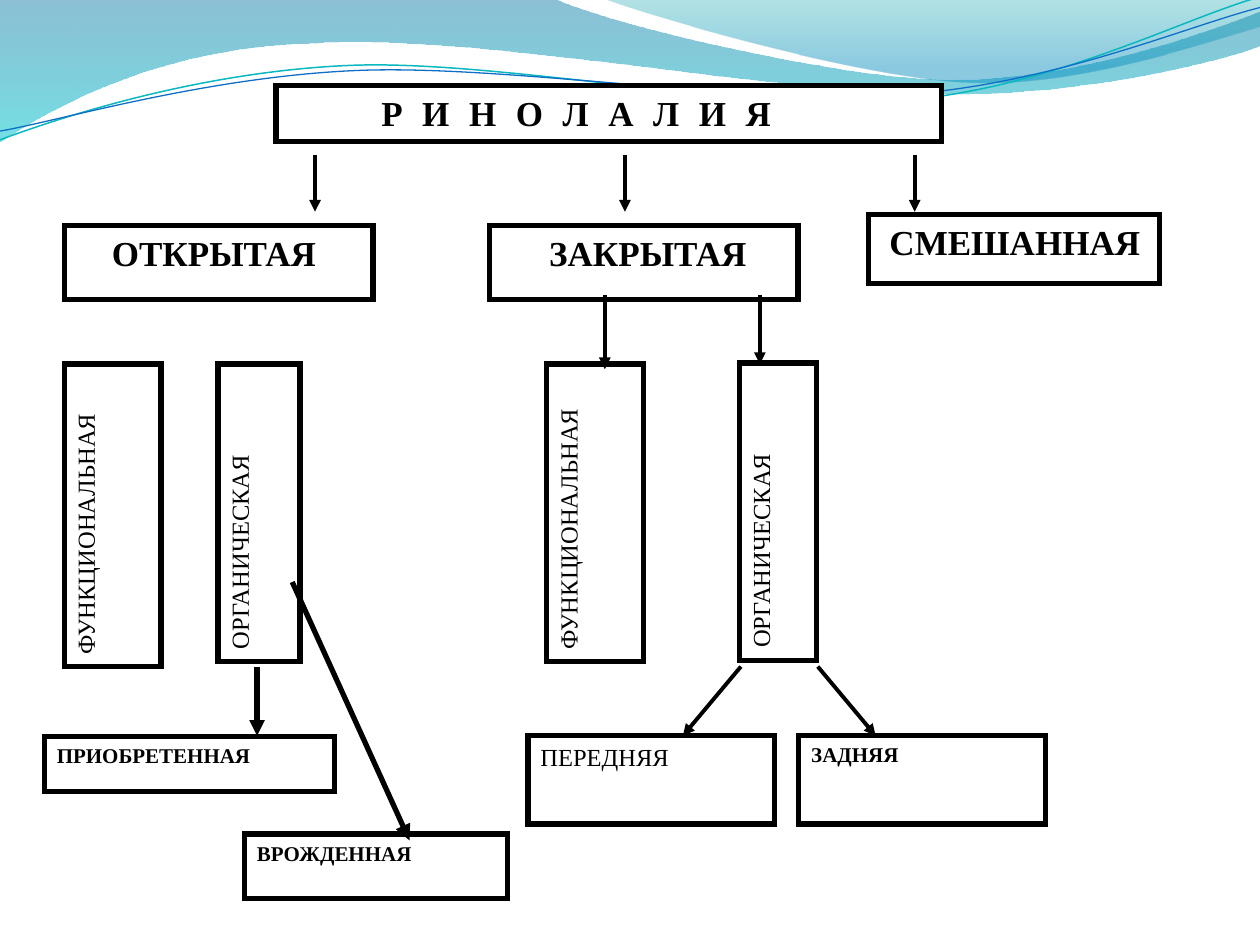
import math
from dataclasses import dataclass
from typing import Optional

import lxml.etree
import pptx
import pptx.dml.color
import pptx.enum.shapes
import pptx.enum.text
import pptx.oxml.ns
import pptx.util

Pt = pptx.util.Pt
qn = pptx.oxml.ns.qn

COLORS = {
    "black": "000000",
    "white": "FFFFFF",
    "deep_blue": "0074A1",
    "aqua": "00C6CF",
    "teal": "00A1A9",
    "sky": "008BBF",
    "teal_line": "0AB8BF",
    "blue_line": "0F6FC6",
}
FONT = "Times New Roman"
INSET = 7.2
TILT = 357.3


@dataclass
class Stop:
    position: float
    color: str
    opacity: int


@dataclass
class Wave:
    """Segments hold two numbers for a straight line, six for a cubic curve."""
    start: tuple
    segments: list
    stops: Optional[list] = None
    line_color: str = ""
    line_width: float = 0
    center: Optional[tuple] = None


@dataclass
class Box:
    text: str
    left: float
    top: float
    width: float
    height: float
    size: float
    bold: bool = True
    indent: float = 0
    vertical: bool = False
    spacing: float = 0


@dataclass
class Arrow:
    start: tuple
    end: tuple
    width: float = 2.25


FILLED_WAVES = [
    Wave((0, 0), [
        (316.8, -0.7),
        (342.7, 12.2, 478.1, 45.4, 545.8, 45.4),
        (614.2, 45.4, 689.8, 18.7, 720, 6.5),
        (720.7, 25.9),
        (707.8, 31.7, 626.4, 54.7, 537.1, 54),
        (447.8, 54, 275, 20.2, 185, 24.5),
        (92.9, 25.9, 33.1, 59.8, -0.7, 81.4),
        (0, 0),
    ], [Stop(0, "deep_blue", 45), Stop(1, "aqua", 55)]),
    Wave((344.9, -0.7), [
        (366.5, 7.9, 491, 44.6, 553.7, 46.8),
        (616.3, 49.7, 691.9, 23, 720, 15.1),
        (720, 0),
        (344.9, -0.7),
    ], [Stop(0, "teal", 30), Stop(0.8, "sky", 45)]),
]

WAVE_LINES = [
    Wave((0, 79.9), [
        (34.6, 67, 113.8, 41, 199.4, 37.4),
        (284.4, 33.8, 427, 64.1, 513.4, 57.6),
        (599.8, 51.1, 675.4, 10.8, 718.6, -1.4),
    ], line_color="teal_line", line_width=0.85, center=(359.3, 41.4)),
    Wave((0, 74.9), [
        (33.8, 69.1, 118.1, 43.9, 203.8, 40.3),
        (290.2, 36.7, 429.8, 60.5, 516.2, 54),
        (601.9, 48.2, 677.5, 15.1, 720, 4.3),
    ], line_color="blue_line", line_width=0.75, center=(359.6, 42.5)),
]

BOXES = [
    Box("Р И Н О Л А Л И Я", 157.7, 49, 380.2, 31.7, 20, indent=53, spacing=3.1),
    Box("ОТКРЫТАЯ", 36.7, 128.9, 176.4, 42.5, 20, indent=20),
    Box("ЗАКРЫТАЯ", 279.6, 128.9, 176.4, 42.5, 20, indent=27),
    Box("СМЕШАННАЯ", 496.1, 122.4, 166.3, 39.6, 20, indent=5),
    Box("ФУНКЦИОНАЛЬНАЯ", 36.7, 208.1, 55.4, 172.8, 14, bold=False, vertical=True),
    Box("ОРГАНИЧЕСКАЯ", 124.6, 208.1, 46.8, 169.9, 14, bold=False, vertical=True),
    Box("ФУНКЦИОНАЛЬНАЯ", 312.5, 208.1, 55.4, 169.9, 14, bold=False, vertical=True),
    Box("ОРГАНИЧЕСКАЯ", 422.6, 207.4, 43.9, 169.9, 14, bold=False, vertical=True),
    Box("ПЕРЕДНЯЯ", 301.7, 420.5, 141.1, 50.4, 14, bold=False),
    Box("ЗАДНЯЯ", 456.5, 420.5, 141.1, 50.4, 12),
    Box("ПРИОБРЕТЕННАЯ", 25.4, 420.7, 165.6, 31.7, 12),
    Box("ВРОЖДЕННАЯ", 139.7, 476.6, 150.5, 36.7, 12),
]

ARROWS = [Arrow((x, 88.6), (x, 121)) for x in (180, 357.1, 522.7)] + [
    Arrow((345.6, 168.5), (345.6, 211)),
    Arrow((434.2, 168.5), (434.2, 208.1)),
    Arrow((467.3, 380.9), (500.4, 420.5)),
    Arrow((423.4, 380.9), (390.2, 420.5)),
    Arrow((146.9, 380.9), (146.9, 420.5), 3),
    Arrow((167, 332.6), (234, 480.2), 3),
]


def rgb(name: str) -> pptx.dml.color.RGBColor:
    return pptx.dml.color.RGBColor.from_string(COLORS[name])


def to_points(wave: Wave, numbers: tuple) -> list:
    """Pair the numbers up as lengths, turned back by the tilt if the wave has one."""
    pairs = list(zip(numbers[::2], numbers[1::2]))
    if wave.center:
        center_x, center_y = wave.center
        cosine, sine = math.cos(math.radians(-TILT)), math.sin(math.radians(-TILT))
        pairs = [(center_x + (x - center_x) * cosine - (y - center_y) * sine,
                  center_y + (x - center_x) * sine + (y - center_y) * cosine)
                 for x, y in pairs]
    return [(Pt(x), Pt(y)) for x, y in pairs]


def draw_wave(shapes, wave: Wave) -> None:
    segments = [to_points(wave, segment) for segment in wave.segments]
    builder = shapes.build_freeform(*to_points(wave, wave.start)[0])
    builder.add_line_segments([points[-1] for points in segments], close=bool(wave.stops))
    shape = builder.convert_to_shape()
    shape.shadow.inherit = False
    lines = list(shape._element.iter(qn("a:lnTo")))
    for line, points in zip(lines, segments):
        if len(points) == 3:
            bend(line, points, shape.left, shape.top)
    if wave.stops:
        shape.line.fill.background()
        fill_gradient(shape, wave.stops)
    else:
        shape.fill.background()
        shape.line.color.rgb = rgb(wave.line_color)
        shape.line.width = Pt(wave.line_width)
        shape.rotation = TILT


def bend(line, points: list, left: int, top: int) -> None:
    """Replace a straight path segment with a cubic curve."""
    curve = lxml.etree.Element(qn("a:cubicBezTo"))
    for x, y in points:
        lxml.etree.SubElement(curve, qn("a:pt"), x=str(x - left), y=str(y - top))
    line.getparent().replace(line, curve)


def fill_gradient(shape, stops: list) -> None:
    shape.fill.gradient()
    shape.fill.gradient_angle = 270
    for gradient_stop, stop in zip(shape.fill.gradient_stops, stops):
        gradient_stop.position = stop.position
        gradient_stop.color.rgb = rgb(stop.color)
    for color, stop in zip(shape._element.spPr.iter(qn("a:srgbClr")), stops):
        lxml.etree.SubElement(color, qn("a:alpha"), val=str(stop.opacity * 1000))


def draw_box(shapes, box: Box) -> None:
    shape = shapes.add_shape(
        pptx.enum.shapes.MSO_SHAPE.RECTANGLE,
        Pt(box.left), Pt(box.top), Pt(box.width), Pt(box.height))
    shape.shadow.inherit = False
    shape.fill.solid()
    shape.fill.fore_color.rgb = rgb("white")
    shape.line.color.rgb = rgb("black")
    shape.line.width = Pt(3)
    lxml.etree.SubElement(shape.line._get_or_add_ln(), qn("a:miter"), lim="800000")
    frame = shape.text_frame
    frame.word_wrap = True
    frame.vertical_anchor = pptx.enum.text.MSO_ANCHOR.TOP
    if box.indent:
        frame.margin_left = Pt(INSET + box.indent)
    if box.vertical:
        frame._txBody.bodyPr.set("vert", "vert270")
    paragraph = frame.paragraphs[0]
    paragraph.text = box.text
    paragraph.alignment = pptx.enum.text.PP_ALIGN.LEFT
    paragraph.font.name = FONT
    paragraph.font.size = Pt(box.size)
    paragraph.font.bold = box.bold
    paragraph.font.color.rgb = rgb("black")
    if box.spacing:
        paragraph.runs[0]._r.get_or_add_rPr().set("spc", str(round(box.spacing * 100)))


def draw_arrow(shapes, arrow: Arrow) -> None:
    connector = shapes.add_connector(
        pptx.enum.shapes.MSO_CONNECTOR.STRAIGHT,
        *map(Pt, arrow.start), *map(Pt, arrow.end))
    connector.line.color.rgb = rgb("black")
    connector.line.width = Pt(arrow.width)
    lxml.etree.SubElement(connector.line._get_or_add_ln(), qn("a:tailEnd"), type="triangle")
    lxml.etree.SubElement(connector._element.spPr, qn("a:effectLst"))


def main() -> None:
    presentation = pptx.Presentation()
    presentation.slide_width, presentation.slide_height = Pt(720), Pt(540)
    slide = presentation.slides.add_slide(presentation.slide_layouts[6])
    for draw, items in ((draw_wave, FILLED_WAVES + WAVE_LINES),
                        (draw_box, BOXES), (draw_arrow, ARROWS)):
        for item in items:
            draw(slide.shapes, item)
    presentation.save("out.pptx")


if __name__ == "__main__":
    main()
